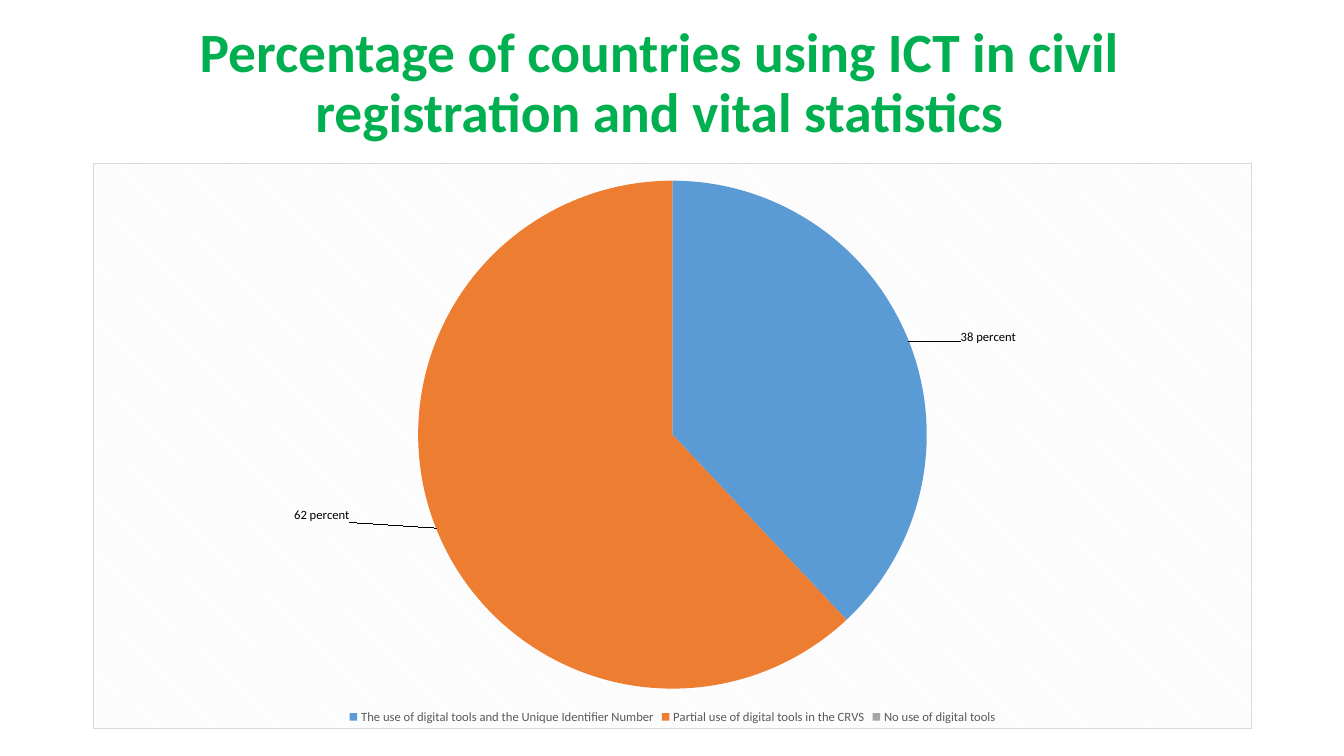
"""Build a slide with a pie chart of ICT use in civil registration."""
from dataclasses import dataclass

from lxml import etree
from pptx import Presentation
from pptx.chart.chart import Chart
from pptx.chart.data import CategoryChartData
from pptx.chart.point import Point
from pptx.dml.color import RGBColor
from pptx.enum.chart import XL_CHART_TYPE, XL_LABEL_POSITION, XL_LEGEND_POSITION
from pptx.enum.text import MSO_ANCHOR, PP_ALIGN
from pptx.oxml import parse_xml
from pptx.oxml.ns import nsdecls, qn
from pptx.slide import Slide
from pptx.text.text import Font
from pptx.util import Inches, Pt

PIE = XL_CHART_TYPE.PIE
OUTSIDE = XL_LABEL_POSITION.OUTSIDE_END
BOTTOM = XL_LEGEND_POSITION.BOTTOM
MIDDLE = MSO_ANCHOR.MIDDLE
CENTER = PP_ALIGN.CENTER
FACE = "Calibri"


@dataclass
class Slice:
    name: str
    value: int
    color: str
    label: str = ""
    shift: tuple[float, float] = (0, 0)


SLICES = [
    Slice("The use of digital tools and the Unique Identifier Number", 38,
          "5B9BD5", "38 percent", (0.04, 0.01)),
    Slice("Partial use of digital tools in the CRVS", 62,
          "ED7D31", "62 percent", (-0.07, -0.04)),
    Slice("No use of digital tools", 0, "A5A5A5"),
]


def rgb(code: str) -> RGBColor:
    return RGBColor.from_string(code)


def style(font: Font, size: float, color: str, bold: bool = False) -> None:
    font.name = FACE
    font.size = Pt(size)
    font.bold = bold
    font.color.rgb = rgb(color)


def layout(**parts: object) -> etree._Element:
    body = "".join(f'<c:{key} val="{val}"/>' for key, val in parts.items())
    return parse_xml(f'<c:layout {nsdecls("c")}><c:manualLayout>{body}'
                     "</c:manualLayout></c:layout>")


def add_title(slide: Slide) -> None:
    box = slide.shapes.add_textbox(Inches(0.66), Inches(0.24), Inches(11.76), Inches(1.2))
    frame = box.text_frame
    frame.word_wrap = True
    frame.vertical_anchor = MIDDLE
    frame.text = "Percentage of countries using ICT in civil registration and vital statistics"
    line = frame.paragraphs[0]
    line.alignment = CENTER
    line.line_spacing = 0.9
    style(line.runs[0].font, 39.6, "00B050", True)


def paint(point: Point, part: Slice) -> None:
    point.format.fill.solid()
    point.format.fill.fore_color.rgb = rgb(part.color)
    if not part.label:
        return
    tag = point.data_label
    tag.text_frame.text = part.label
    style(tag.text_frame.paragraphs[0].runs[0].font, 9, "000000")
    tag.position = OUTSIDE


def set_back(chart: Chart) -> None:
    back = parse_xml(
        f'<c:spPr {nsdecls("c", "a")}><a:pattFill prst="dkDnDiag">'
        '<a:fgClr><a:srgbClr val="F2F2F2"/></a:fgClr>'
        '<a:bgClr><a:srgbClr val="FFFFFF"/></a:bgClr></a:pattFill>'
        '<a:ln w="9525"><a:solidFill><a:srgbClr val="D9D9D9"/></a:solidFill></a:ln>'
        "</c:spPr>")
    chart.element.find(qn("c:chart")).addnext(back)


def add_pie(slide: Slide) -> None:
    data = CategoryChartData()
    data.categories = [part.name for part in SLICES]
    data.add_series("Series 1", [part.value for part in SLICES])
    chart = slide.shapes.add_chart(
        PIE, Inches(0.92), Inches(1.62), Inches(11.5), Inches(5.61), data).chart
    style(chart.font, 10, "000000")
    chart.has_title = False
    chart.has_legend = True
    chart.legend.position = BOTTOM
    chart.legend.include_in_layout = False
    style(chart.legend.font, 9, "595959")
    plot = chart.plots[0]
    plot.vary_by_categories = True
    series = plot.series[0]
    tags = series.data_labels
    tags.show_value = False
    tags.show_percentage = False
    for i, part in enumerate(SLICES):
        paint(series.points[i], part)
    shown = [part for part in SLICES if part.label]
    for node, part in zip(chart.element.iter(qn("c:dLbl")), shown):
        x, y = part.shift
        node.find(qn("c:idx")).addnext(layout(x=x, y=y))
    area = chart.element.find(f".//{qn('c:plotArea')}")
    for old in area.findall(qn("c:layout")):
        area.remove(old)
    area.insert(0, layout(layoutTarget="inner", xMode="edge", yMode="edge",
                          x=0.28, y=0.03, w=0.44, h=0.9))
    set_back(chart)


def main() -> None:
    deck = Presentation()
    deck.slide_width = Inches(13.33)
    deck.slide_height = Inches(7.5)
    slide = deck.slides.add_slide(deck.slide_layouts[6])
    add_title(slide)
    add_pie(slide)
    deck.save("out.pptx")


if __name__ == "__main__":
    main()
